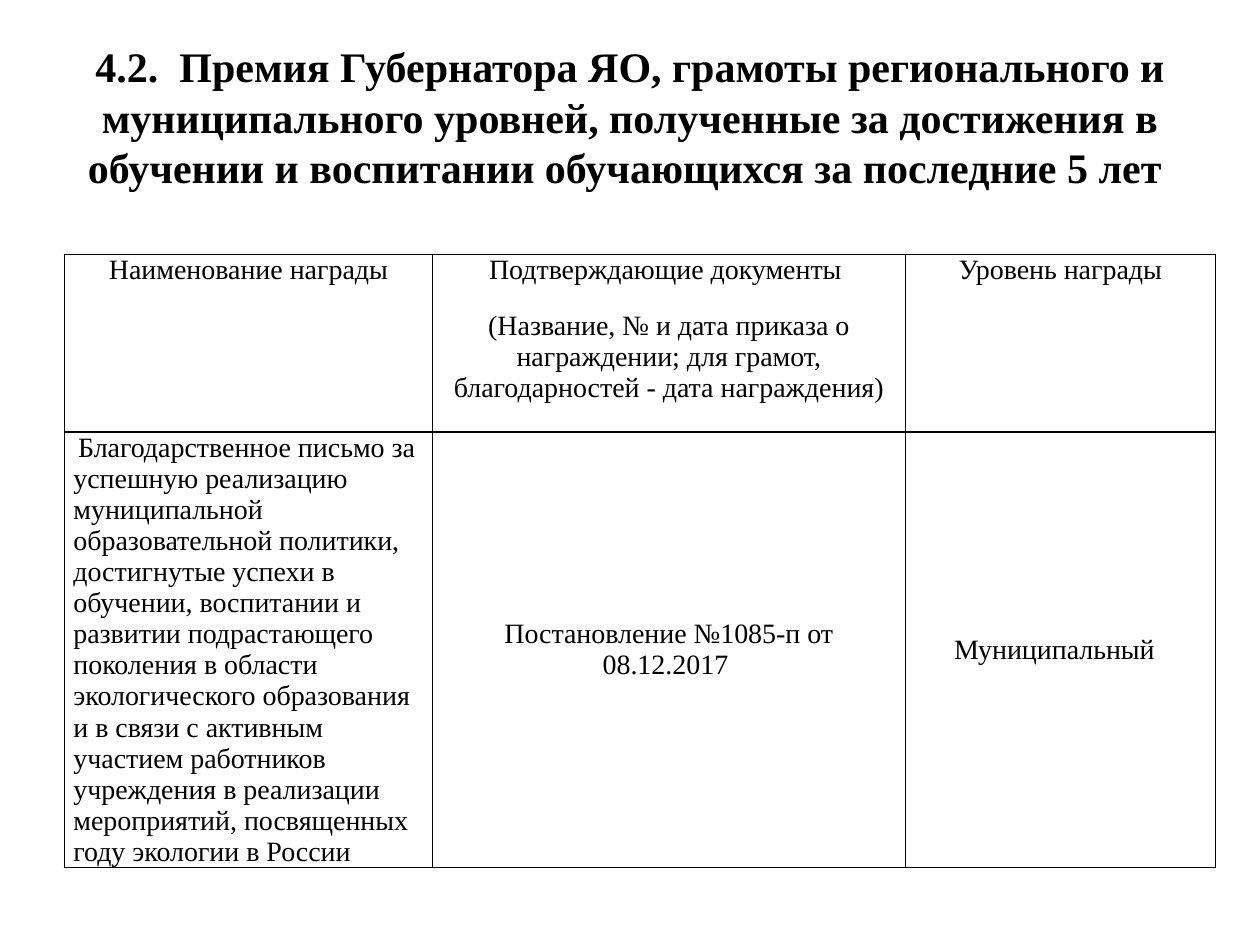
import pptx
import pptx.util
import pptx.dml.color
import pptx.enum.text
import pptx.oxml
import pptx.oxml.ns

Cm = pptx.util.Cm
Pt = pptx.util.Pt
ALIGN = pptx.enum.text.PP_ALIGN
ANCHOR = pptx.enum.text.MSO_ANCHOR
BODY_FONT = "Times New Roman"
BLACK = "000000"

COLUMN_WIDTHS = [7.42, 9.53, 6.25]
ROW_HEIGHTS = [3.58, 8.77]
HEADERS = [
    ["Наименование награды"],
    [
        "Подтверждающие документы ",
        "(Название, № и дата приказа о награждении; для грамот, благодарностей - дата награждения)",
    ],
    ["Уровень награды"],
]
AWARD = (
    "Благодарственное письмо за успешную реализацию муниципальной образовательной политики, "
    "достигнутые успехи в обучении, воспитании и развитии подрастающего поколения в области "
    "экологического образования и в связи с активным участием работников учреждения в реализации "
    "мероприятий, посвященных году экологии в России"
)


def color(value):
    return pptx.dml.color.RGBColor.from_string(value)


def add_run(paragraph, text, size=16, font=BODY_FONT, bold=False):
    run = paragraph.add_run()
    run.text = text
    run.font.size = Pt(size)
    run.font.name = font
    run.font.bold = bold
    run.font.color.rgb = color(BLACK)


def add_title(slide, text):
    title = slide.shapes.title
    title.left, title.top, title.width, title.height = Cm(1.27), Cm(0.76), Cm(22.86), Cm(3.18)
    frame = title.text_frame
    frame.word_wrap = True
    frame.vertical_anchor = ANCHOR.MIDDLE
    paragraph = frame.paragraphs[0]
    paragraph.alignment = ALIGN.CENTER
    add_run(paragraph, text, size=24, bold=True)


def add_borders(cell):
    properties = cell._tc.get_or_add_tcPr()
    for index, side in enumerate(("lnL", "lnR", "lnT", "lnB")):
        border = pptx.oxml.parse_xml(
            f'<a:{side} {pptx.oxml.ns.nsdecls("a")} w="{Pt(1)}">'
            f'<a:solidFill><a:srgbClr val="{BLACK}"/></a:solidFill></a:{side}>'
        )
        properties.insert(index, border)


def add_table(slide):
    table = slide.shapes.add_table(
        len(ROW_HEIGHTS), len(COLUMN_WIDTHS), Cm(1.3), Cm(5.13),
        Cm(sum(COLUMN_WIDTHS)), Cm(sum(ROW_HEIGHTS)),
    ).table
    table.first_row = False
    table.horz_banding = False
    for column, width in zip(table.columns, COLUMN_WIDTHS):
        column.width = Cm(width)
    for row, height in zip(table.rows, ROW_HEIGHTS):
        row.height = Cm(height)
    return table


def fill_cell(cell, paragraphs, alignment=ALIGN.CENTER, anchor=ANCHOR.TOP):
    cell.margin_left = cell.margin_right = Cm(0.18)
    cell.margin_top = cell.margin_bottom = 0
    cell.vertical_anchor = anchor
    cell.fill.background()
    add_borders(cell)
    frame = cell.text_frame
    for index, runs in enumerate(paragraphs):
        paragraph = frame.add_paragraph() if index else frame.paragraphs[0]
        paragraph.alignment = alignment
        if index:
            paragraph.space_before = Pt(14)
        for run in runs:
            add_run(paragraph, *run)


def main():
    presentation = pptx.Presentation()
    presentation.slide_width = Cm(25.4)
    presentation.slide_height = Cm(19.05)
    slide = presentation.slides.add_slide(presentation.slide_layouts[5])
    add_title(
        slide,
        "4.2.  Премия Губернатора ЯО, грамоты регионального и муниципального уровней, "
        "полученные за достижения в обучении и воспитании обучающихся за последние 5 лет ",
    )
    table = add_table(slide)
    for column, texts in enumerate(HEADERS):
        fill_cell(table.cell(0, column), [[(text,)] for text in texts])
    spacer = (" ", 12, "Calibri")
    fill_cell(table.cell(1, 0), [[spacer, (AWARD,)]], alignment=ALIGN.LEFT)
    fill_cell(table.cell(1, 1), [[("Постановление №1085-п от 08.12.2017 ",)]], anchor=ANCHOR.MIDDLE)
    fill_cell(table.cell(1, 2), [[("Муниципальный ",), spacer]], anchor=ANCHOR.MIDDLE)
    presentation.save("out.pptx")


if __name__ == "__main__":
    main()
